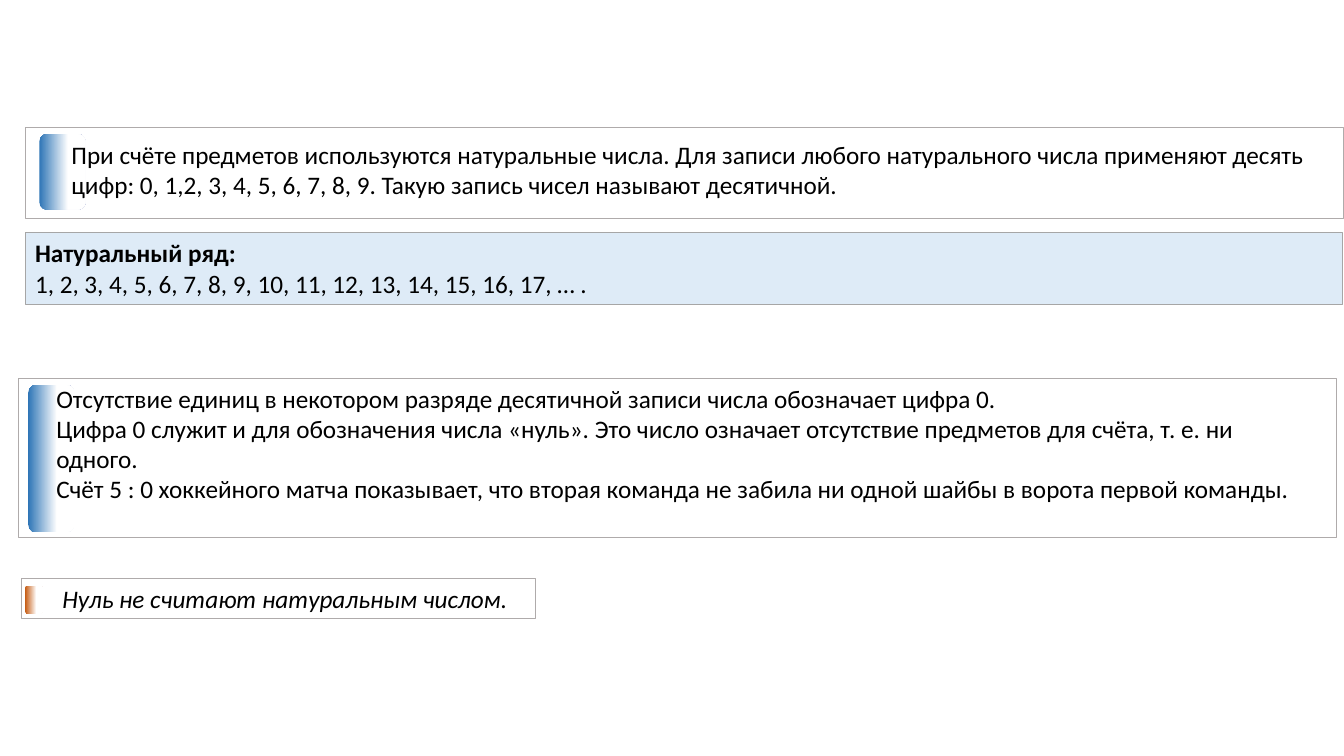
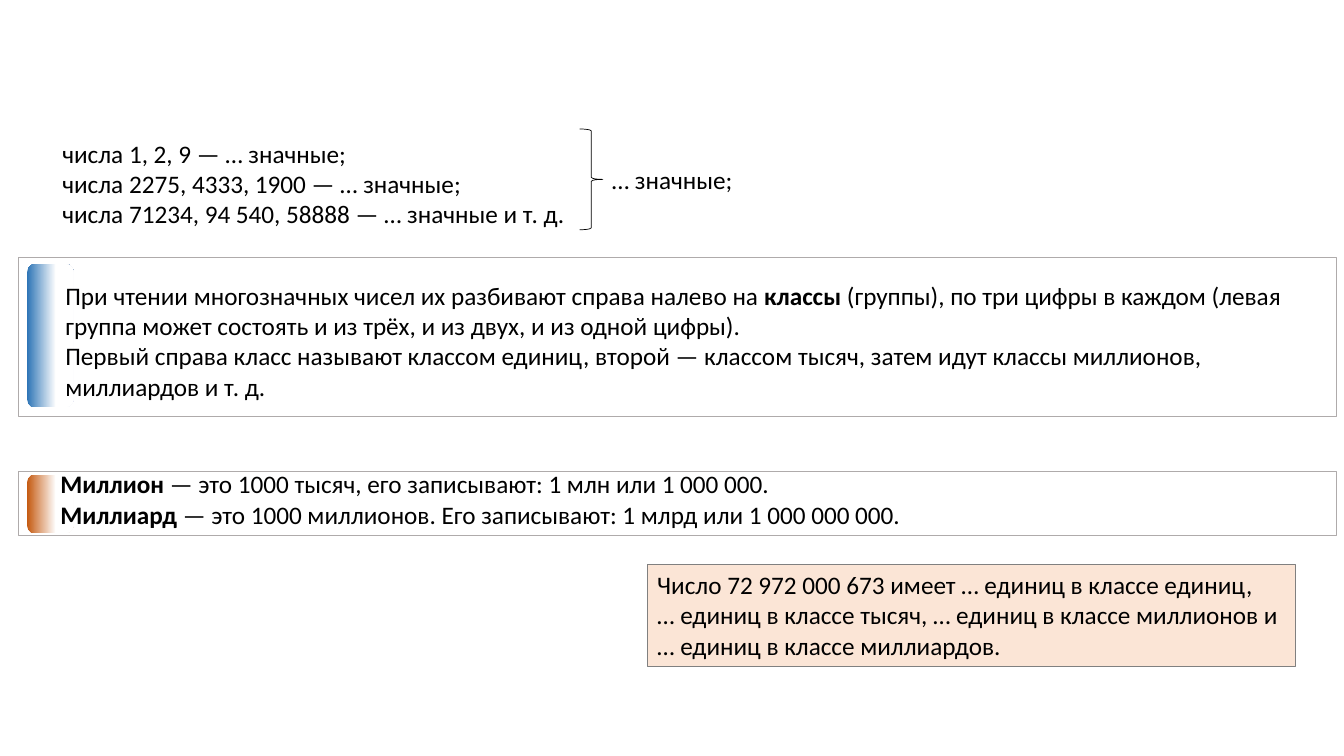
from pptx import Presentation
from pptx.dml.color import RGBColor
from pptx.enum.shapes import MSO_SHAPE as Shape
from pptx.enum.text import MSO_ANCHOR as Anchor, MSO_AUTO_SIZE as Fit, PP_ALIGN as Align
from pptx.util import Pt

PX = 9144  # 100 px to the inch
FONT = "Calibri"
BLACK = RGBColor(0x00, 0x00, 0x00)
WHITE = RGBColor(0xFF, 0xFF, 0xFF)
BLUE = RGBColor(0x2E, 0x75, 0xB6)
RUST = RGBColor(0xC5, 0x5A, 0x11)
PALE = RGBColor(0xDE, 0xEB, 0xF7)
PEACH = RGBColor(0xFB, 0xE5, 0xD6)
SILVER = RGBColor(0xAF, 0xAB, 0xAB)
GREY = RGBColor(0xA6, 0xA6, 0xA6)
DARK = RGBColor(0x80, 0x80, 0x80)


def draw(shapes, kind, place, fill=None, line=None, width=0.5):
    """Add a flat preset shape; no fill or line unless given."""
    shape = shapes.add_shape(kind, *[n * PX for n in place])
    shape.shadow.inherit = False
    if fill is None:
        shape.fill.background()
    else:
        shape.fill.solid()
        shape.fill.fore_color.rgb = fill
    if line is None:
        shape.line.fill.background()
    else:
        shape.line.color.rgb = line
        shape.line.width = Pt(width)
    return shape


def write(shape, lines, wrap=True, italic=False):
    """Fill a shape with paragraphs; parts between asterisks are bold."""
    frame = shape.text_frame
    frame.word_wrap = wrap
    frame.auto_size = Fit.SHAPE_TO_FIT_TEXT
    frame.vertical_anchor = Anchor.TOP
    frame.text = "\n".join(lines)
    for para, line in zip(frame.paragraphs, lines):
        para.alignment = Align.LEFT
        parts = line.split("*")
        para.runs[0].text = parts[0]
        for part in parts[1:]:
            para.add_run().text = part
        for i, run in enumerate(para.runs):
            font = run.font
            font.name, font.size, font.color.rgb = FONT, Pt(18), BLACK
            font.bold = i % 2 == 1
            font.italic = italic


deck = Presentation()
deck.slide_width, deck.slide_height = 1333 * PX, 750 * PX
first, second = [deck.slides.add_slide(deck.slide_layouts[6]).shapes for _ in range(2)]

# Framed cards with a fading bar at the left
cards = [
    (first, (25, 126, 1307, 91), (39, 133, 46, 75), BLUE),
    (first, (18, 375, 1307, 158), (28, 382, 46, 146), BLUE),
    (first, (21, 574, 510, 39), (25, 581, 18, 28), RUST),
    (second, (18, 255, 1307, 158), (27, 262, 46, 142), BLUE),
    (second, (18, 468, 1307, 63), (27, 471, 46, 58), RUST),
]
for slide, place, strip, hue in cards:
    card = slide.add_group_shape().shapes
    draw(card, Shape.RECTANGLE, place, WHITE, SILVER)
    bar = draw(card, Shape.ROUNDED_RECTANGLE, strip)
    bar.fill.gradient()
    bar.fill.gradient_angle = 0
    for stop, spot, tone in zip(bar.fill.gradient_stops, (0, 0.62), (hue, WHITE)):
        stop.position = spot
        stop.color.rgb = tone

# Tinted boxes
row = draw(first, Shape.RECTANGLE, (25, 231, 1307, 71), PALE, GREY, 0.75)
write(row, ["*Натуральный ряд:*", "1, 2, 3, 4, 5, 6, 7, 8, 9, 10, 11, 12, 13, 14, 15, 16, 17, … ."])
task = draw(second, Shape.RECTANGLE, (642, 560, 643, 101), PEACH, DARK, 0.75)
write(task, [
    "Число 72 972 000 673 имеет … единиц в классе единиц,",
    "… единиц в классе тысяч, … единиц в классе миллионов и",
    "… единиц в классе миллиардов.",
], wrap=False)

# Brace beside the list of numbers
draw(second, Shape.RIGHT_BRACE, (575, 128, 23, 100), line=BLACK)

# Texts: slide, place, wrap, italic, lines
texts = [
    (first, (61, 133, 1266, 71), True, False, [
        "При счёте предметов используются натуральные числа. Для записи любого натурального "
        "числа применяют десять цифр: 0, 1,2, 3, 4, 5, 6, 7, 8, 9. Такую запись чисел "
        "называют десятичной.",
    ]),
    (first, (46, 375, 1272, 131), True, False, [
        "Отсутствие единиц в некотором разряде десятичной записи числа обозначает цифра 0.",
        "Цифра 0 служит и для обозначения числа «нуль». Это число означает отсутствие "
        "предметов для счёта, т. е. ни одного.",
        "Счёт 5 : 0 хоккейного матча показывает, что вторая команда не забила ни одной "
        "шайбы в ворота первой команды.",
    ]),
    (first, (52, 574, 466, 40), False, True, ["Нуль не считают натуральным числом."]),
    (second, (52, 132, 1266, 101), True, False, [
        "числа 1, 2, 9 — … значные;",
        "числа 2275, 4333, 1900 — … значные;",
        "числа 71234, 94 540, 58888 — … значные и т. д.",
    ]),
    (second, (597, 158, 141, 40), False, False, ["… значные;"]),
    (second, (55, 273, 1270, 131), True, False, [
        "При чтении многозначных чисел их разбивают справа налево на *классы *(группы), "
        "по три цифры в каждом (левая группа может состоять и из трёх, и из двух, "
        "и из одной цифры).",
        "Первый справа класс называют классом единиц, второй — классом тысяч, затем идут "
        "классы миллионов, миллиардов и т. д.",
    ]),
    (second, (50, 460, 1272, 71), True, False, [
        "*Миллион *— это 1000 тысяч, его записывают: 1 млн или 1 000 000.",
        "*Миллиард *— это 1000 миллионов. Его записывают: 1 млрд или 1 000 000 000.",
    ]),
]
for slide, place, wrap, italic, lines in texts:
    write(slide.add_textbox(*[n * PX for n in place]), lines, wrap, italic)

deck.save("out.pptx")
